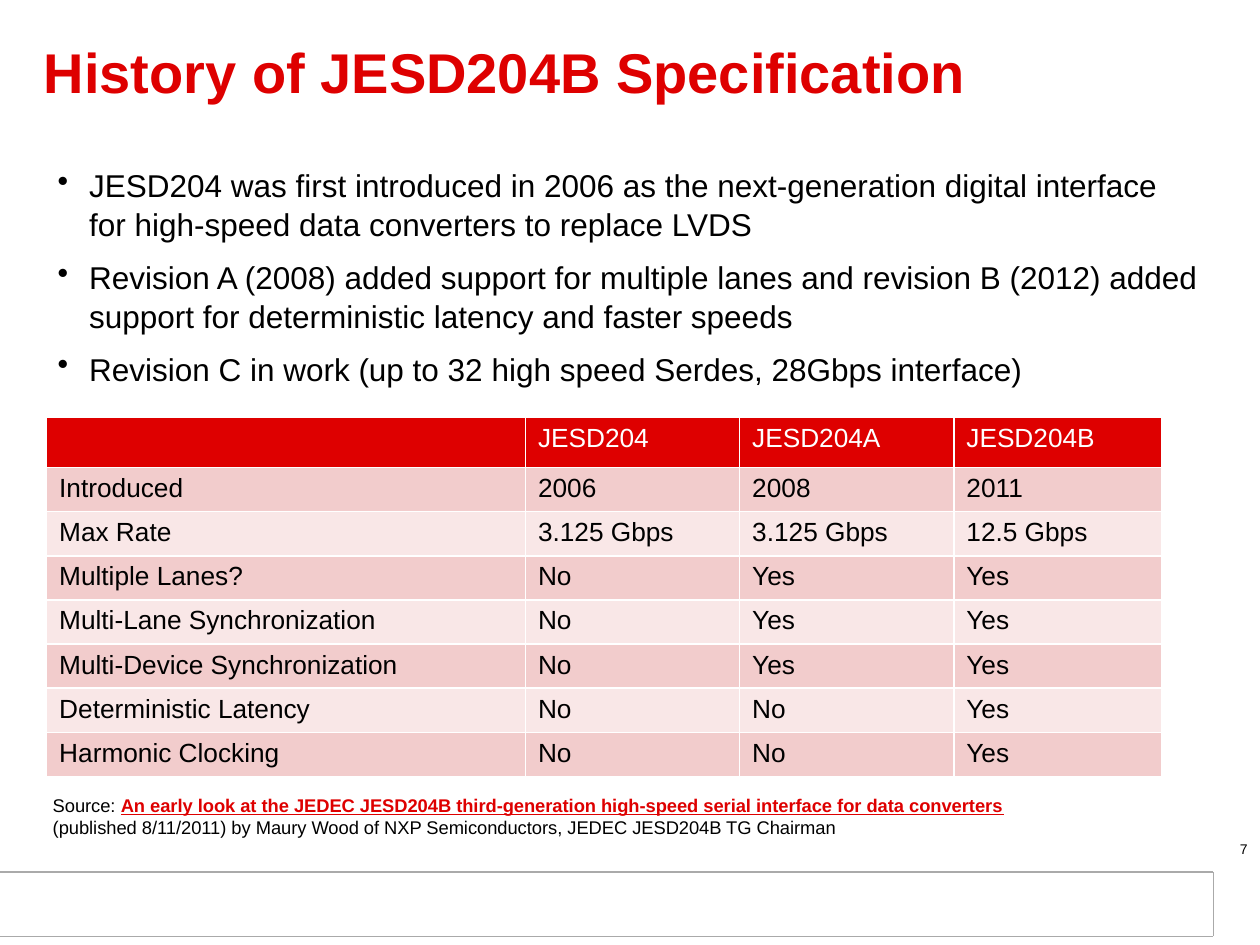
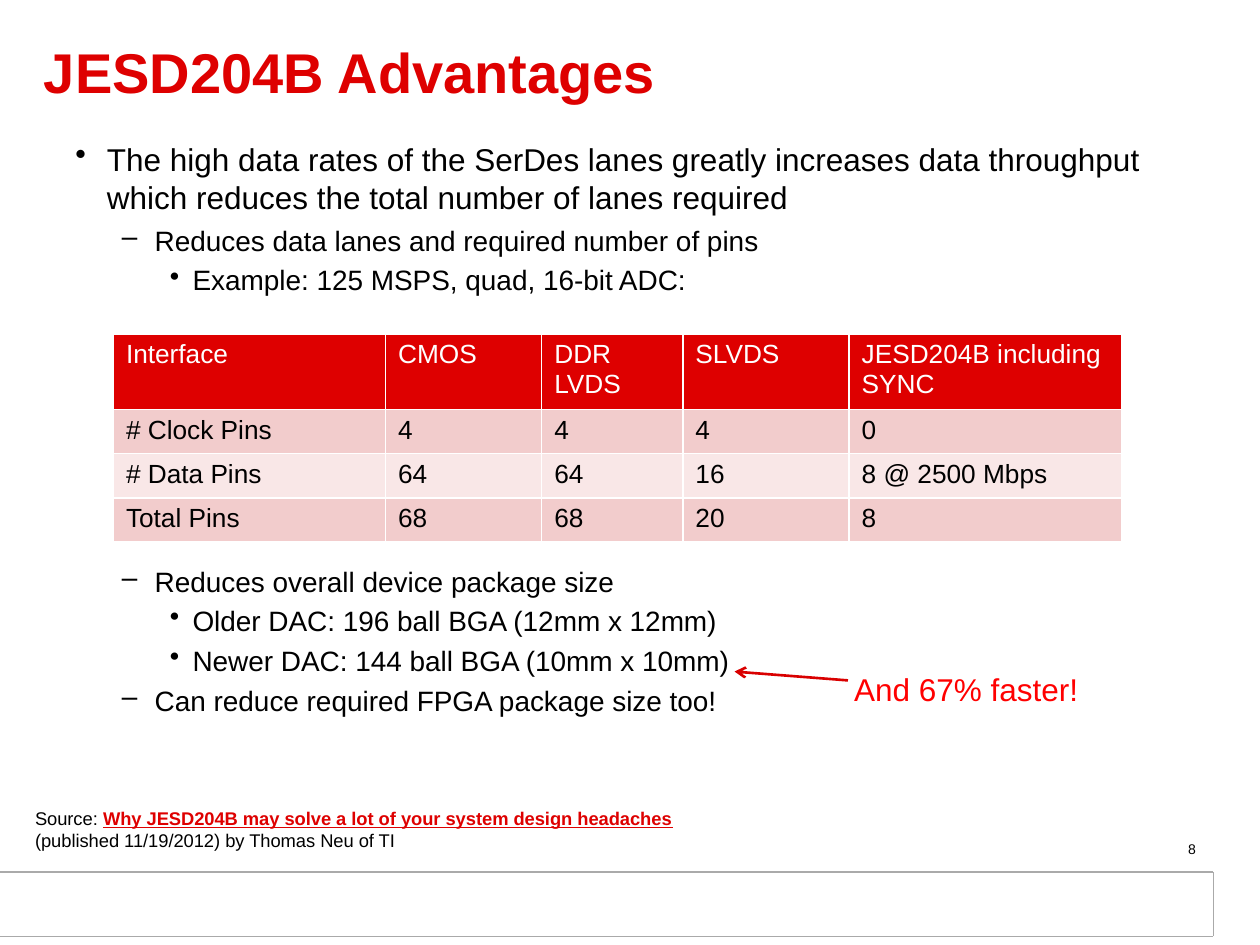
from dataclasses import dataclass
from itertools import accumulate
from lxml import etree
from pptx import Presentation, util as u
from pptx.dml.color import RGBColor
from pptx.enum import shapes, text
from pptx.oxml import ns

COLS, ROWS = 100, 75
UNIT = u.Inches(0.1)


@dataclass(frozen=True)
class Theme:
    font: str = "Arial"
    red: str = "DE0000"
    hot: str = "FF0000"
    arrow: str = "D90000"
    ink: str = "000000"
    paper: str = "FFFFFF"
    rule: str = "AAAAAA"
    dark: str = "F2CCCC"
    pale: str = "F9E7E7"
    title: float = 32
    body: float = 18
    sub: float = 16
    cell: float = 15
    note: float = 10.5
    page: float = 8


T = Theme()

LEVELS = (
    ("•", 0.25, 0.25, 8, T.body),
    ("–", 0.63, 0.26, 3.4, T.sub),
    ("•", 0.93, 0.18, 2.8, T.sub),
)


@dataclass(frozen=True)
class Box:
    x: float
    y: float
    w: float
    h: float

    def area(self, x, y, w, h):
        return Box(self.x + x, self.y + y, w, h)

    def emu(self):
        return [round(n * UNIT) for n in (self.x, self.y, self.w, self.h)]


PAGE = Box(0, 0, COLS, ROWS)


def color(code):
    return RGBColor.from_string(code)


def add_run(para, words, size, tint=T.ink, bold=False, line=False):
    run = para.add_run()
    run.text = words
    font = run.font
    font.name, font.size, font.bold = T.font, u.Pt(size), bold
    font.color.rgb = color(tint)
    if line:
        font.underline = True


def add_box(slide, box):
    frame = slide.shapes.add_textbox(*box.emu()).text_frame
    frame.word_wrap = True
    return frame


def add_para(frame, first):
    return frame.paragraphs[0] if first else frame.add_paragraph()


def add_line(slide, start, end, tint, width, head=False):
    ends = [round(n * UNIT) for n in (*start, *end)]
    line = slide.shapes.add_connector(shapes.MSO_CONNECTOR.STRAIGHT, *ends)
    line.line.color.rgb = color(tint)
    line.line.width = u.Pt(width)
    props = line._element.spPr
    if head:
        tail = etree.SubElement(props.find(ns.qn("a:ln")), ns.qn("a:tailEnd"))
        tail.set("type", "arrow")
    etree.SubElement(props, ns.qn("a:effectLst"))


def add_title(slide, box, words):
    frame = add_box(slide, box)
    frame.vertical_anchor = text.MSO_ANCHOR.MIDDLE
    para = frame.paragraphs[0]
    para.line_spacing = 0.85
    add_run(para, words, T.title, T.red, bold=True)


def add_band(slide, box):
    band = slide.shapes.add_shape(
        shapes.MSO_SHAPE.RECTANGLE, *box.area(0.5, 0, box.w - 0.7, box.h).emu())
    band.shadow.inherit = False
    band.fill.solid()
    band.fill.fore_color.rgb = color(T.paper)
    band.line.fill.background()
    right, low = box.x + box.w, box.y + box.h
    for start, end in (
        ((box.x, low), (right, low)),
        ((box.x, box.y), (right, box.y)),
        ((right, low), (right, box.y)),
    ):
        add_line(slide, start, end, T.rule, 0.75)


def add_page(slide, box, number):
    para = add_box(slide, box).paragraphs[0]
    para.alignment = text.PP_ALIGN.RIGHT
    add_run(para, str(number), T.page)


def add_list(slide, box, items):
    frame = add_box(slide, box)
    for i, (level, words) in enumerate(items):
        mark, left, hang, gap, size = LEVELS[level]
        para = add_para(frame, i == 0)
        para.level = level
        para.line_spacing = 1.03
        para.space_before = u.Pt(gap if i else 0)
        props = para._p.get_or_add_pPr()
        props.set("marL", str(u.Inches(left)))
        props.set("indent", str(-u.Inches(hang)))
        etree.SubElement(props, ns.qn("a:buChar")).set("char", mark)
        add_run(para, words, size)


def add_grid(slide, box, widths, heights, rows):
    table = slide.shapes.add_table(len(rows), len(widths), *box.emu()).table
    for lines, sizes, whole, name in (
        (table.columns, widths, box.w, "width"),
        (table.rows, heights, box.h, "height"),
    ):
        marks = [0, *accumulate(sizes)]
        stops = [round(m / marks[-1] * whole * UNIT) for m in marks]
        for line, low, high in zip(lines, stops, stops[1:]):
            setattr(line, name, high - low)
    for r, row in enumerate(rows):
        fill = T.red if r == 0 else (T.pale, T.dark)[r % 2]
        tint = T.paper if r == 0 else T.ink
        for c, words in enumerate(row):
            cell = table.cell(r, c)
            cell.fill.solid()
            cell.fill.fore_color.rgb = color(fill)
            if words:
                add_run(cell.text_frame.paragraphs[0], words, T.cell, tint)


def add_source(slide, box, name, rest):
    frame = add_box(slide, box)
    para = frame.paragraphs[0]
    add_run(para, "Source: ", T.note)
    add_run(para, name, T.note, T.red, bold=True, line=True)
    add_run(add_para(frame, False), rest, T.note)


def add_callout(slide, box, words):
    add_run(add_box(slide, box).paragraphs[0], words, T.body, T.hot)
    add_line(slide, (box.x + 0.5, box.y + 1.3), (box.x - 8.5, box.y + 0.6),
             T.arrow, 1.5, head=True)


def add_base(deck, box, title):
    slide = deck.slides.add_slide(deck.slide_layouts[6])
    add_band(slide, box.area(-0.1, 69.2, 96.4, 5.1))
    add_title(slide, box.area(2.5, 1.6, 92.5, 8.9), title)
    return slide


def add_history(deck, box):
    slide = add_base(deck, box, "History of JESD204B Specification")
    add_list(slide, box.area(3.6, 12.6, 92.6, 20), (
        (0, "JESD204 was first introduced in 2006 as the next-generation digital "
            "interface for high-speed data converters to replace LVDS"),
        (0, "Revision A (2008) added support for multiple lanes and revision B "
            "(2012) added support for deterministic latency and faster speeds"),
        (0, "Revision C in work (up to 32 high speed Serdes, 28Gbps interface)"),
    ))
    add_grid(slide, box.area(3.7, 33.1, 88.5, 28.1),
             (3.8, 1.7, 1.7, 1.65), (0.36, *[0.35] * 7), (
        ("", "JESD204", "JESD204A", "JESD204B"),
        ("Introduced", "2006", "2008", "2011"),
        ("Max Rate", "3.125 Gbps", "3.125 Gbps", "12.5 Gbps"),
        ("Multiple Lanes?", "No", "Yes", "Yes"),
        ("Multi-Lane Synchronization", "No", "Yes", "Yes"),
        ("Multi-Device Synchronization", "No", "Yes", "Yes"),
        ("Deterministic Latency", "No", "No", "Yes"),
        ("Harmonic Clocking", "No", "No", "Yes"),
    ))
    add_page(slide, box.area(76.7, 66.2, 23.3, 2.3), 7)
    add_source(
        slide, box.area(3.2, 62.5, 90.8, 4.5),
        "An early look at the JEDEC JESD204B third-generation high-speed "
        "serial interface for data converters",
        "(published 8/11/2011) by Maury Wood of NXP Semiconductors, "
        "JEDEC JESD204B TG Chairman")


def add_gains(deck, box):
    slide = add_base(deck, box, "JESD204B Advantages")
    add_list(slide, box.area(5, 10.5, 90, 14), (
        (0, "The high data rates of the SerDes lanes greatly increases data "
            "throughput which reduces the total number of lanes required"),
        (1, "Reduces data lanes and required number of pins"),
        (2, "Example: 125 MSPS, quad, 16-bit ADC:"),
    ))
    add_list(slide, box.area(5, 44.2, 90, 13), (
        (1, "Reduces overall device package size"),
        (2, "Older DAC: 196 ball BGA (12mm x 12mm)"),
        (2, "Newer DAC: 144 ball BGA (10mm x 10mm)"),
        (1, "Can reduce required FPGA package size too!"),
    ))
    add_page(slide, box.area(72.6, 66.2, 23.3, 2.3), 8)
    add_grid(slide, box.area(9, 26.5, 80, 16.5),
             (2.16, 1.24, 1.12, 1.32, 2.16), (0.6, *[0.35] * 3), (
        ("Interface", "CMOS", "DDR LVDS", "SLVDS", "JESD204B including SYNC"),
        ("# Clock Pins", "4", "4", "4", "0"),
        ("# Data Pins", "64", "64", "16", "8 @ 2500 Mbps"),
        ("Total Pins", "68", "68", "20", "8"),
    ))
    add_source(
        slide, box.area(1.8, 63.6, 89.3, 4.5),
        "Why JESD204B may solve a lot of your system design headaches",
        "(published 11/19/2012) by Thomas Neu of TI")
    add_callout(slide, box.area(66.8, 52.7, 20.8, 4), "And 67% faster!")


def main():
    deck = Presentation()
    deck.slide_width, deck.slide_height = COLS * UNIT, ROWS * UNIT
    add_history(deck, PAGE)
    add_gains(deck, PAGE)
    deck.save("out.pptx")


if __name__ == "__main__":
    main()
